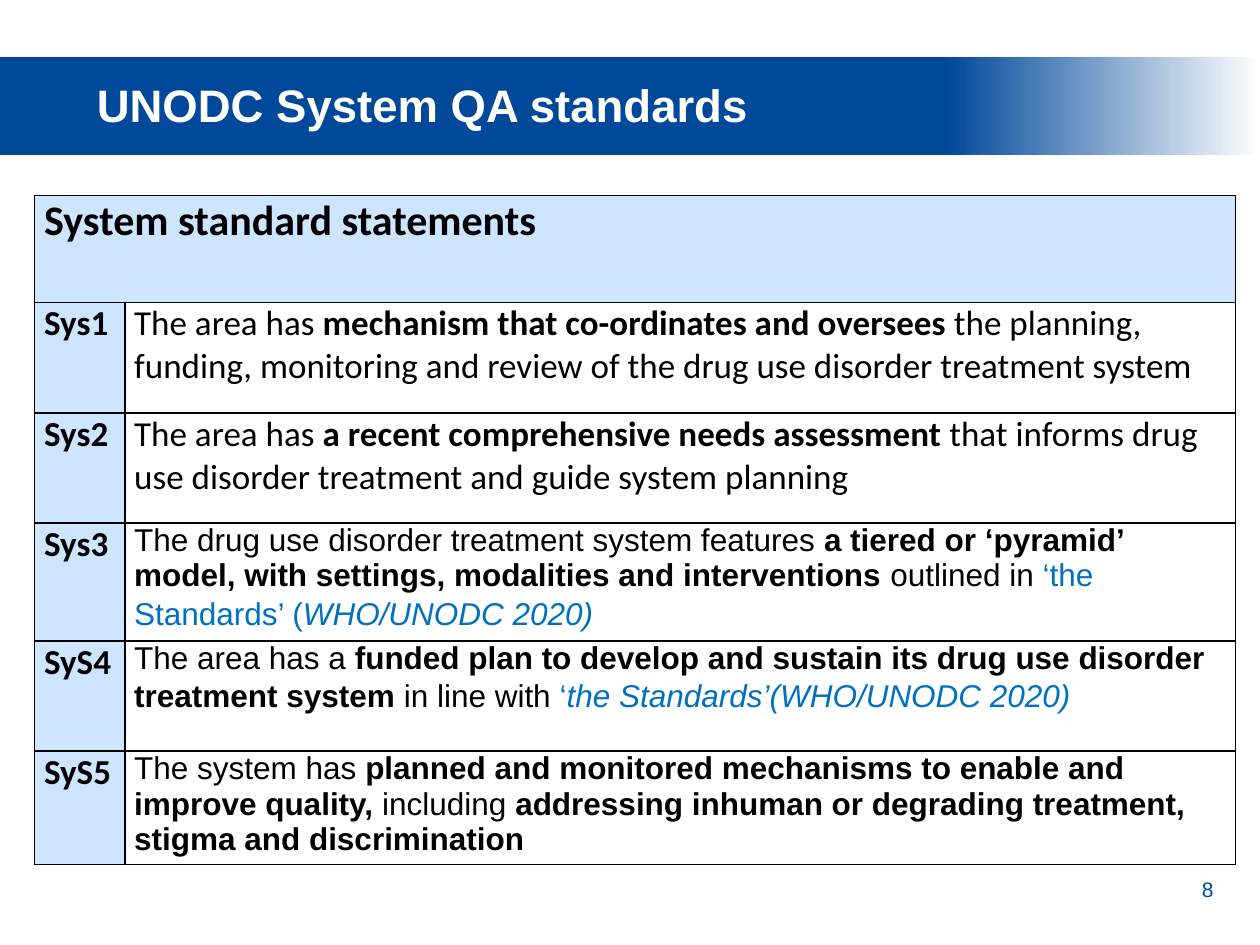
from lxml import etree
from pptx import Presentation
from pptx.dml.color import RGBColor
from pptx.enum.shapes import MSO_SHAPE
from pptx.enum.text import MSO_ANCHOR, PP_ALIGN
from pptx.oxml.ns import qn
from pptx.util import Inches, Pt

RECT = MSO_SHAPE.RECTANGLE
TOP, LEFT, RIGHT = MSO_ANCHOR.TOP, PP_ALIGN.LEFT, PP_ALIGN.RIGHT
COLS, ROWS = 100, 75  # slide grid
NAVY, WHITE, BLACK, PALE, LINK = "004899", "FFFFFF", "000000", "CDE5FF", "0070C0"

# Text formats
CALIBRI = {"name": "Calibri", "size": 20, "color": BLACK}
ARIAL = {"name": "Arial", "size": 18, "color": BLACK}
BOLD = {"bold": True}
BLUE = {"color": LINK}
CITE = {"color": LINK, "italic": True}
GAP = {"size": 20}

# Label, base format, then runs of text with what differs from the base
STANDARDS = [
    ("Sys1", CALIBRI, [
        ("The area has ", {}),
        ("mechanism that co-ordinates and oversees ", BOLD),
        ("the planning, funding, monitoring and review of the drug use "
         "disorder treatment system", {})]),
    ("Sys2", CALIBRI, [
        ("The area has ", {}),
        ("a recent comprehensive needs assessment ", BOLD),
        ("that informs drug use disorder treatment and guide system planning", {})]),
    ("Sys3", ARIAL, [
        ("The drug use disorder treatment system features ", {}),
        ("a tiered or ‘pyramid’ model, with settings, modalities and "
         "interventions ", BOLD),
        ("outlined in ", {}),
        ("‘the Standards’ (", BLUE),
        ("WHO/UNODC 2020)", CITE),
        (" ", GAP)]),
    ("SyS4", ARIAL, [
        ("The area has a ", {}),
        ("funded plan to develop and sustain its drug use disorder "
         "treatment system ", BOLD),
        ("in line with ", {}),
        ("‘", BLUE),
        ("the Standards’(WHO/UNODC 2020)", CITE),
        (" ", GAP)]),
    ("SyS5", ARIAL, [
        ("The system has ", {}),
        ("planned and monitored mechanisms to enable and improve quality, ", BOLD),
        ("including ", {}),
        ("addressing inhuman or degrading treatment, stigma and "
         "discrimination", BOLD)]),
]


def rgb(color):
    return RGBColor.from_string(color)


class Deck:
    """Holds the style and the current slide."""

    def __init__(self, width, height):
        self.prs = Presentation()
        self.prs.slide_width, self.prs.slide_height = Inches(width), Inches(height)
        self.s = self.prs.slides.add_slide(self.prs.slide_layouts[6])

    def x(self, cols):
        return round(self.prs.slide_width * cols / COLS)

    def y(self, rows):
        return round(self.prs.slide_height * rows / ROWS)

    def box(self, left, top, width, height):
        return self.x(left), self.y(top), self.x(width), self.y(height)

    def add_runs(self, tf, base, runs, align=LEFT):
        p = tf.paragraphs[0]
        p.alignment = align
        for text, extra in runs:
            r = p.add_run()
            r.text = text
            for key, value in {**base, **extra}.items():
                if key == "color":
                    r.font.color.rgb = rgb(value)
                else:
                    setattr(r.font, key, Pt(value) if key == "size" else value)

    def text(self, place, text, style, align=LEFT, inset=0.5):
        tf = self.s.shapes.add_textbox(*self.box(*place)).text_frame
        tf.word_wrap = True
        tf.vertical_anchor = TOP
        tf.margin_top = self.y(inset)
        self.add_runs(tf, style, [(text, {})], align)

    def band(self, place, stops, angle):
        sp = self.s.shapes.add_shape(RECT, *self.box(*place))
        sp.shadow.inherit = False
        sp.line.fill.background()
        sp.fill.gradient()
        sp.fill.gradient_angle = angle
        for stop, (position, color) in zip(sp.fill.gradient_stops, stops):
            stop.position = position
            stop.color.rgb = rgb(color)

    def table(self, place, widths, heights):
        shape = self.s.shapes.add_table(len(heights), len(widths), *self.box(*place))
        table = shape.table
        table.first_row = table.horz_banding = False
        for column, width in zip(table.columns, widths):
            column.width = self.x(width)
        for row, height in zip(table.rows, heights):
            row.height = self.y(height)
        for cell in table.iter_cells():
            self.borders(cell)
        return table

    def borders(self, cell):
        tcPr = cell._tc.get_or_add_tcPr()
        for side in ("lnL", "lnR", "lnT", "lnB"):
            ln = etree.SubElement(tcPr, qn(f"a:{side}"), w=str(Pt(1)))
            fill = etree.SubElement(ln, qn("a:solidFill"))
            etree.SubElement(fill, qn("a:srgbClr"), val=BLACK)

    def cell(self, cell, base, runs, fill=None):
        cell.margin_left = cell.margin_right = self.x(0.75)
        cell.margin_top = cell.margin_bottom = 0
        if fill:
            cell.fill.solid()
            cell.fill.fore_color.rgb = rgb(fill)
        else:
            cell.fill.background()
        self.add_runs(cell.text_frame, base, runs)


def main():
    deck = Deck(10, 7.5)

    # Page number
    deck.text((93.2, 69.1, 4.1, 3), "8",
              {"name": "Arial", "size": 12, "color": NAVY}, RIGHT)

    # Title band
    deck.band((0, 4.5, COLS, 7.8), [(0, WHITE), (0.25, NAVY)], 180)
    deck.text((6.7, 5.3, 84, 6.2), "UNODC System QA standards",
              {"name": "Arial", "size": 26, "color": WHITE, "bold": True}, inset=0.8)

    # Table of standards
    widths = [7.15, 88.15]
    heights = [8.5] + [8.76] * len(STANDARDS)
    table = deck.table((2.75, 15.5, sum(widths), sum(heights)), widths, heights)
    heading = table.cell(0, 0)
    heading.merge(table.cell(0, 1))
    deck.cell(heading, {**CALIBRI, **BOLD, "size": 24},
              [("System standard statements", {})], PALE)
    for i, (label, base, runs) in enumerate(STANDARDS, 1):
        deck.cell(table.cell(i, 0), CALIBRI, [(label, BOLD)], PALE)
        deck.cell(table.cell(i, 1), base, runs)

    deck.prs.save("out.pptx")


if __name__ == "__main__":
    main()
